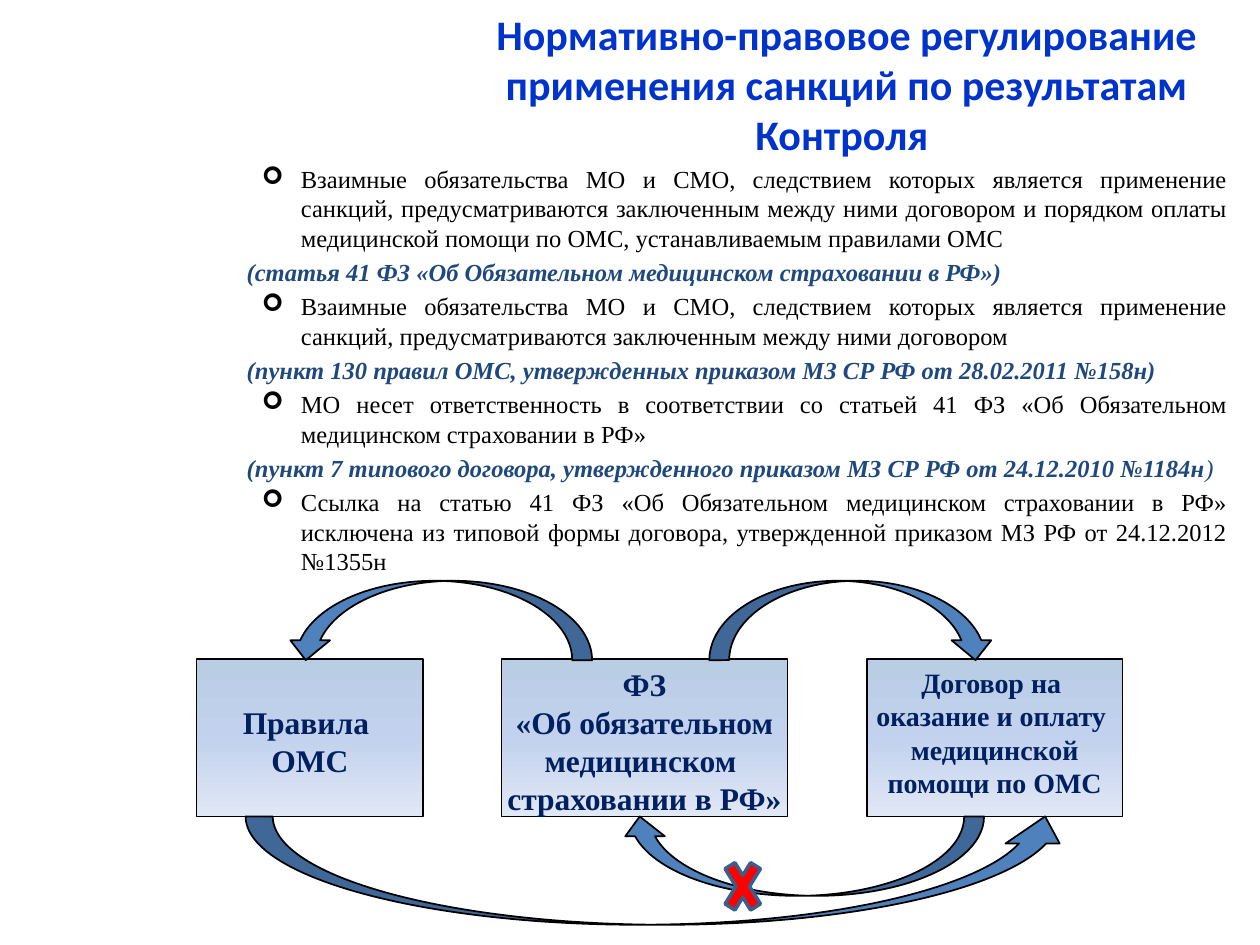
import copy

import pptx
import pptx.dml.color
import pptx.enum.shapes
import pptx.enum.text
import pptx.oxml.ns
import pptx.util
from lxml import etree

Inches = pptx.util.Inches
Pt = pptx.util.Pt
RGBColor = pptx.dml.color.RGBColor
MSO_SHAPE = pptx.enum.shapes.MSO_SHAPE
PP_ALIGN = pptx.enum.text.PP_ALIGN
MSO_ANCHOR = pptx.enum.text.MSO_ANCHOR
qn = pptx.oxml.ns.qn

TITLE_BLUE = RGBColor(0x00, 0x33, 0xCC)
CITATION_BLUE = RGBColor(0x1F, 0x49, 0x7D)
NAVY = RGBColor(0x00, 0x20, 0x60)
ARROW_BLUE = RGBColor(0x4F, 0x81, 0xBD)
CROSS_EDGE = RGBColor(0x3A, 0x5F, 0x8C)
RED = RGBColor(0xFF, 0x00, 0x00)
BLACK = RGBColor(0x00, 0x00, 0x00)
BOX_GRADIENT = [
    (0, RGBColor(0xB9, 0xCD, 0xE5)),
    (0.5, RGBColor(0xC2, 0xD1, 0xED)),
    (1, RGBColor(0xE1, 0xE8, 0xF5)),
]
SERIF = "Times New Roman"

TITLE = "Нормативно-правовое регулирование применения санкций по результатам Контроля "
PROVISIONS = [
    ("Взаимные обязательства МО и СМО, следствием которых является применение санкций, "
     "предусматриваются заключенным между ними договором и порядком оплаты медицинской "
     "помощи по ОМС, устанавливаемым правилами ОМС ",
     "(статья 41 ФЗ «Об Обязательном медицинском страховании в РФ»)", ""),
    ("Взаимные обязательства МО и СМО, следствием которых является применение санкций, "
     "предусматриваются заключенным между ними договором",
     "(пункт 130 правил ОМС, утвержденных приказом МЗ СР РФ от 28.02.2011 №158н)", ""),
    ("МО несет ответственность в соответствии со статьей 41 ФЗ «Об Обязательном "
     "медицинском страховании в РФ» ",
     "(пункт 7 типового договора, утвержденного приказом МЗ СР РФ от 24.12.2010 №1184н", ")"),
    ("Ссылка на статью 41 ФЗ «Об Обязательном медицинском страховании в РФ» исключена "
     "из типовой формы договора, утвержденной приказом МЗ РФ от 24.12.2012 №1355н", "", ""),
]


def add_run(paragraph, text, size, color, font=SERIF, bold=False, italic=False):
    run = paragraph.add_run()
    run.text = text
    run.font.name = font
    run.font.size = Pt(size)
    run.font.color.rgb = color
    run.font.bold = bold
    run.font.italic = italic


def next_paragraph(frame, index):
    return frame.add_paragraph() if index else frame.paragraphs[0]


def add_frame(slide, left, top, width, height):
    frame = slide.shapes.add_textbox(
        Inches(left), Inches(top), Inches(width), Inches(height)).text_frame
    frame.word_wrap = True
    return frame


def add_title(slide, left, top, width, height):
    frame = add_frame(slide, left, top, width, height)
    frame.vertical_anchor = MSO_ANCHOR.MIDDLE
    heading = frame.paragraphs[0]
    heading.alignment = PP_ALIGN.CENTER
    add_run(heading, TITLE, 24, TITLE_BLUE, "Calibri", bold=True)


def indent(paragraph, margin, first_line=0.0, bullet=None):
    properties = paragraph._p.get_or_add_pPr()
    properties.set("marL", str(Inches(margin)))
    properties.set("indent", str(Inches(first_line)))
    if bullet:
        etree.SubElement(properties, qn("a:buFont")).set("typeface", "Wingdings")
        etree.SubElement(properties, qn("a:buChar")).set("char", bullet)


def add_provisions(slide, left, top, width, height):
    frame = add_frame(slide, left, top, width, height)
    for index, (provision, citation, ending) in enumerate(PROVISIONS):
        item = next_paragraph(frame, index)
        indent(item, 0.81, -0.31, "➢")
        item.alignment = PP_ALIGN.JUSTIFY
        if index:
            item.space_before = Pt(2.8)
        add_run(item, provision, 14, BLACK)
        if citation:
            source = frame.add_paragraph()
            indent(source, 0.38)
            source.alignment = PP_ALIGN.JUSTIFY
            source.space_before = Pt(2.8)
            add_run(source, citation, 14, CITATION_BLUE, bold=True, italic=True)
            if ending:
                add_run(source, ending, 14, CITATION_BLUE, italic=True)


def add_outlined(slide, kind, left, top, width, height, edge=BLACK, weight=1):
    shape = slide.shapes.add_shape(
        kind, Inches(left), Inches(top), Inches(width), Inches(height))
    shape.shadow.inherit = False
    shape.line.color.rgb = edge
    shape.line.width = Pt(weight)
    return shape


def add_solid(slide, kind, left, top, width, height, color, edge=BLACK, weight=1):
    shape = add_outlined(slide, kind, left, top, width, height, edge, weight)
    shape.fill.solid()
    shape.fill.fore_color.rgb = color
    return shape


def add_document(slide, left, top, width, height, lines, size, inset=0.05):
    document = add_outlined(slide, MSO_SHAPE.RECTANGLE, left, top, width, height)
    document.fill.gradient()
    document.fill.gradient_angle = 270
    stops = document._element.spPr.find(qn("a:gradFill")).find(qn("a:gsLst"))
    stops.append(copy.deepcopy(stops[0]))
    for stop, (position, color) in zip(document.fill.gradient_stops, BOX_GRADIENT):
        stop.position = position
        stop.color.rgb = color
    frame = document.text_frame
    frame.word_wrap = False
    frame.vertical_anchor = MSO_ANCHOR.TOP
    frame.margin_top = Inches(inset)
    for index, line in enumerate(lines):
        paragraph = next_paragraph(frame, index)
        paragraph.alignment = PP_ALIGN.CENTER
        add_run(paragraph, line, size, NAVY, bold=True)


def add_diagram(slide, left, top):
    box_top, box_height = top + 0.62, 1.25
    box_bottom = box_top + box_height
    add_document(slide, left + 2.42, box_top, 2.27, box_height,
                 [" ФЗ ", "«Об обязательном", "медицинском ", "страховании в РФ»"], 18)
    add_document(slide, left, box_top, 1.8, box_height, ["Правила ", "ОМС"], 18, 0.35)
    add_document(slide, left + 5.32, box_top, 2.03, box_height,
                 ["Договор на ", "оказание и оплату ", "медицинской", "помощи по ОМС"], 16)

    down, up = MSO_SHAPE.CURVED_DOWN_ARROW, MSO_SHAPE.CURVED_UP_ARROW
    add_solid(slide, down, left + 4.07, top, 2.27, 0.63, ARROW_BLUE)
    law_to_rules = add_solid(slide, down, left + 0.71, top, 2.43, 0.63, ARROW_BLUE)
    law_to_rules._element.spPr.find(qn("a:xfrm")).set("flipH", "1")
    contract_to_law = add_solid(slide, down, left + 3.36, box_bottom, 2.89, 0.63, ARROW_BLUE)
    contract_to_law.rotation = 180
    add_solid(slide, up, left + 0.39, box_bottom, 6.56, 0.86, ARROW_BLUE)
    add_solid(slide, MSO_SHAPE.MATH_MULTIPLY, left + 4.14, box_bottom + 0.24,
              0.39, 0.63, RED, CROSS_EDGE, 2)


def main():
    deck = pptx.Presentation()
    deck.slide_width = Inches(10)
    deck.slide_height = Inches(7.5)
    slide = deck.slides.add_slide(deck.slide_layouts[6])
    add_title(slide, 3.44, 0, 6.56, 1.33)
    add_provisions(slide, 1.48, 1.25, 8.36, 6.25)
    add_diagram(slide, 1.56, 4.61)
    deck.save("out.pptx")


if __name__ == "__main__":
    main()
